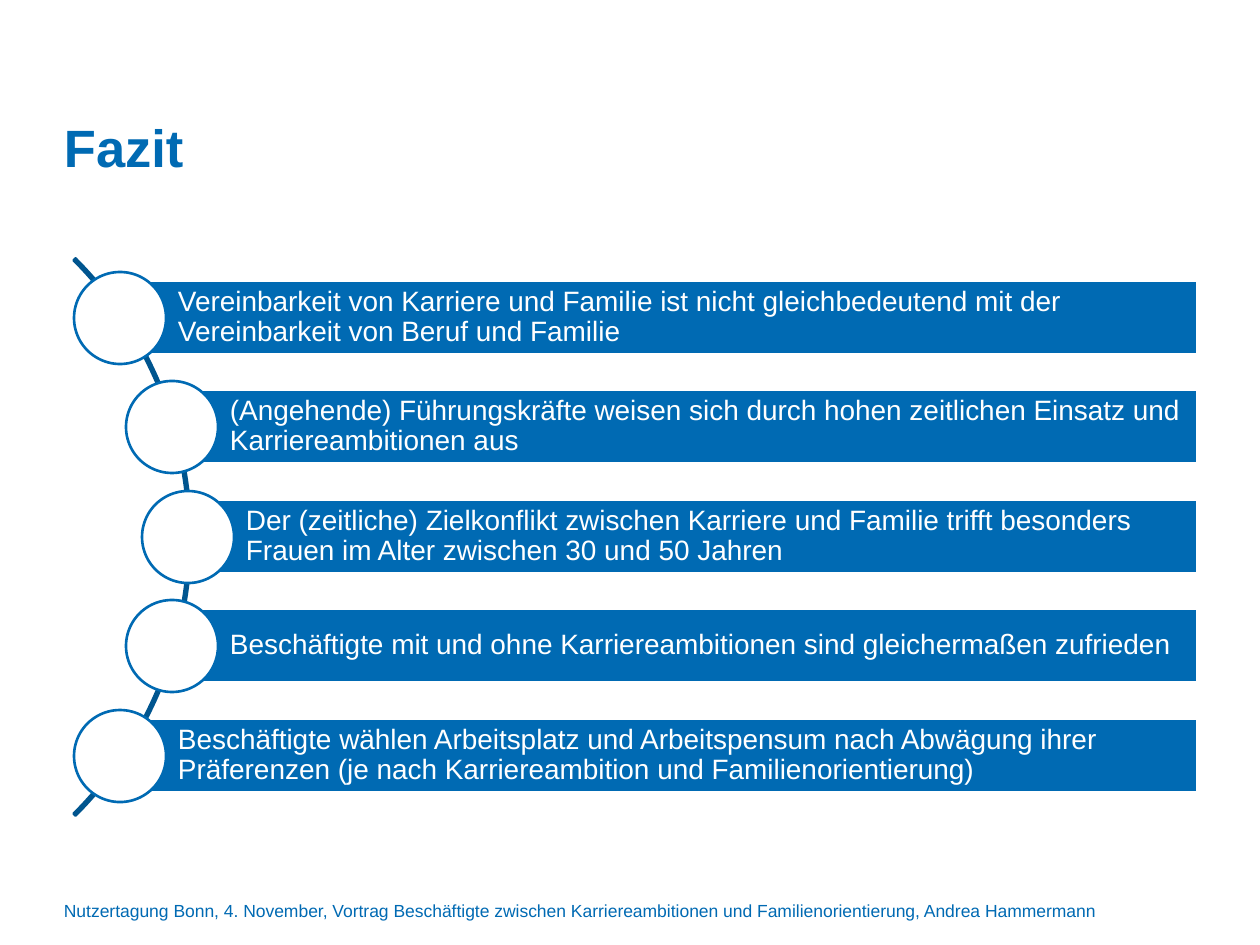
from pptx import Presentation
from pptx.dml.color import RGBColor
from pptx.enum.shapes import MSO_SHAPE
from pptx.enum.text import MSO_ANCHOR, MSO_AUTO_SIZE, PP_ALIGN
from pptx.util import Inches, Pt

BLUE = RGBColor(0x00, 0x6A, 0xB3)
DARK_BLUE = RGBColor(0x00, 0x55, 0x8F)
WHITE = RGBColor(0xFF, 0xFF, 0xFF)

PX = Inches(1) / 126
BAR_RIGHT = 1197
BAR_HEIGHT = 73
FIRST_BAR_TOP = 281
LAST_BAR_TOP = 719
CIRCLE_SIZE = 92

CONCLUSIONS = [
    (120, "Vereinbarkeit von Karriere und Familie ist nicht gleichbedeutend mit der Vereinbarkeit von Beruf und Familie"),
    (172, "(Angehende) Führungskräfte weisen sich durch hohen zeitlichen Einsatz und Karriereambitionen aus"),
    (188, "Der (zeitliche) Zielkonflikt zwischen Karriere und Familie trifft besonders Frauen im Alter zwischen 30 und 50 Jahren"),
    (172, "Beschäftigte mit und ohne Karriereambitionen sind gleichermaßen zufrieden"),
    (120, "Beschäftigte wählen Arbeitsplatz und Arbeitspensum nach Abwägung ihrer Präferenzen (je nach Karriereambition und Familienorientierung)"),
]
FOOTER = (
    "Nutzertagung Bonn, 4. November, Vortrag Beschäftigte zwischen "
    "Karriereambitionen und Familienorientierung, Andrea Hammermann"
)


def emu(*lengths):
    return [round(length * PX) for length in lengths]


def set_values(target, values):
    for name, value in values.items():
        setattr(target, name, value)


class SlideBuilder:
    """Draws styled elements on the current slide."""

    font_name = "Arial"
    line_width = Pt(1.5)

    def __init__(self, slide):
        self.slide = slide

    def fill_text(self, box, text, size, color, insets=(0, 0, 0, 0),
                  anchor=MSO_ANCHOR.TOP, bold=False, spacing=1.0):
        frame = box.text_frame
        left, top, right, bottom = emu(*insets)
        set_values(frame, {
            "margin_left": left, "margin_top": top,
            "margin_right": right, "margin_bottom": bottom,
            "word_wrap": True, "auto_size": MSO_AUTO_SIZE.NONE,
            "vertical_anchor": anchor,
        })
        para = frame.paragraphs[0]
        set_values(para, {"alignment": PP_ALIGN.LEFT, "line_spacing": spacing})
        span = para.add_run()
        span.text = text
        set_values(span.font, {"name": self.font_name, "size": Pt(size), "bold": bold})
        span.font.color.rgb = color

    def title(self, text, left, top, width, height):
        box = self.slide.shapes.title
        names = ("left", "top", "width", "height")
        set_values(box, dict(zip(names, emu(left, top, width, height))))
        self.fill_text(box, text, 30, BLUE, bold=True)

    def label(self, text, left, top, width, height):
        box = self.slide.shapes.add_textbox(*emu(left, top, width, height))
        self.fill_text(box, text, 10, BLUE)

    def shape(self, kind, left, top, width, height, fill, line):
        shape = self.slide.shapes.add_shape(kind, *emu(left, top, width, height))
        shape.shadow.inherit = False
        shape.fill.solid()
        shape.fill.fore_color.rgb = fill
        shape.line.color.rgb = line
        shape.line.width = self.line_width
        return shape

    def arc(self, left, top, size):
        arc = self.shape(MSO_SHAPE.BLOCK_ARC, left, top, size, size, DARK_BLUE, DARK_BLUE)
        for index, value in enumerate((189, 27, 0.0035)):
            arc.adjustments[index] = value

    def conclusion(self, text, left, top):
        bar = self.shape(MSO_SHAPE.RECTANGLE, left, top, BAR_RIGHT - left, BAR_HEIGHT, BLUE, WHITE)
        self.fill_text(bar, text, 16, WHITE, (58, 5, 5, 5), MSO_ANCHOR.MIDDLE, spacing=0.9)
        self.shape(MSO_SHAPE.OVAL, left - CIRCLE_SIZE // 2, top - (CIRCLE_SIZE - BAR_HEIGHT) // 2,
                   CIRCLE_SIZE, CIRCLE_SIZE, WHITE, BLUE)


def main():
    deck = Presentation()
    set_values(deck, {"slide_width": Inches(10), "slide_height": Inches(7.5)})
    page = SlideBuilder(deck.slides.add_slide(deck.slide_layouts[5]))
    page.title("Fazit", 64, 115, 1142, 106)
    page.arc(-597, 143, 788)
    for index, (left, text) in enumerate(CONCLUSIONS):
        step = (LAST_BAR_TOP - FIRST_BAR_TOP) * index // (len(CONCLUSIONS) - 1)
        page.conclusion(text, left, FIRST_BAR_TOP + step)
    page.label(FOOTER, 64, 900, 1072, 28)
    deck.save("out.pptx")


if __name__ == "__main__":
    main()
